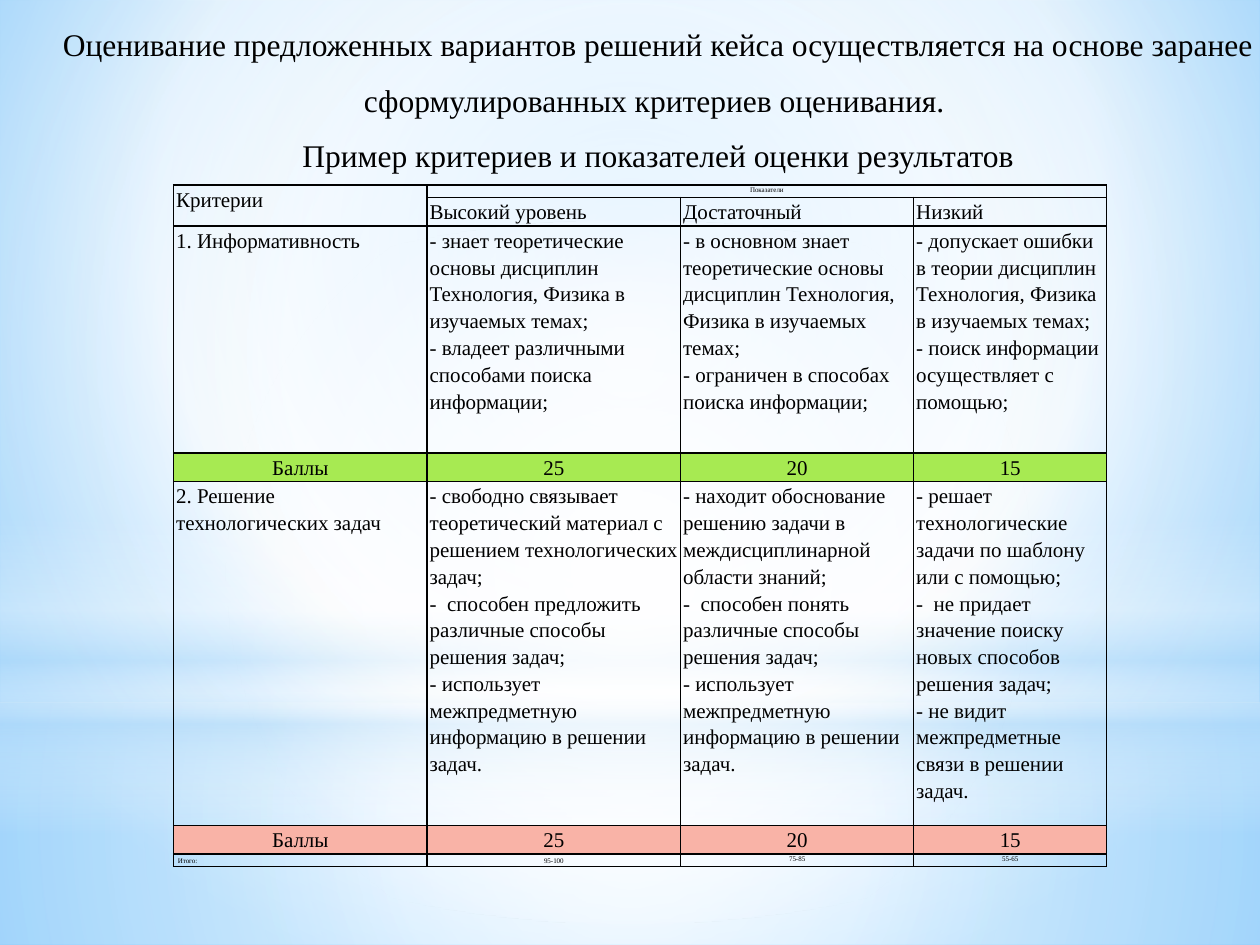
import pptx
import pptx.util
import pptx.dml.color
import pptx.enum.shapes
import pptx.enum.text
import pptx.oxml
import pptx.oxml.ns
from pptx.util import Cm, Pt

FONT = "Times New Roman"
INK = "000000"
ALIGN = pptx.enum.text.PP_ALIGN
ANCHOR = pptx.enum.text.MSO_ANCHOR
SHAPE = pptx.enum.shapes.MSO_SHAPE

HEADING = [
    "Оценивание предложенных вариантов решений кейса осуществляется на основе заранее",
    "сформулированных критериев оценивания. ",
    "Пример критериев и показателей оценки результатов",
]
HEADING_INDENT = 2.5

POINTS = ["Баллы", "25", "20", "15"]
ROWS = [
    ["Критерии", "Показатели", "", ""],
    ["", "Высокий уровень", "Достаточный", "Низкий"],
    [
        "1. Информативность",
        "- знает теоретические основы дисциплин Технология, Физика в изучаемых темах;\n"
        "- владеет различными способами поиска информации;",
        "- в основном знает теоретические основы дисциплин Технология, Физика в изучаемых темах;\n"
        "- ограничен в способах поиска информации;",
        "- допускает ошибки в теории дисциплин Технология, Физика в изучаемых темах;\n"
        "- поиск информации осуществляет с помощью;",
    ],
    POINTS,
    [
        "2. Решение технологических задач",
        "- свободно связывает теоретический материал с решением технологических задач;\n"
        "-  способен предложить различные способы решения задач;\n"
        "- использует межпредметную информацию в решении задач.",
        "- находит обоснование решению задачи в междисциплинарной области знаний;\n"
        "-  способен понять различные способы решения задач;\n"
        "- использует межпредметную информацию в решении задач.",
        "- решает технологические задачи по шаблону или с помощью;\n"
        "-  не придает значение поиску новых способов решения задач;\n"
        "- не видит межпредметные связи в решении задач.",
    ],
    POINTS,
    [" Итого:", "95-100", "75-85", "55-65"],
]
COLUMN_WIDTHS = [5.11, 5.11, 4.7, 3.89]
ROW_HEIGHTS = [0.25, 0.58, 4.57, 0.58, 6.93, 0.58, 0.25]
ROW_FILLS = {3: "A7EA52", 5: "F9B3A7"}
SMALL_CELLS = [(0, 1), (6, 0), (6, 1), (6, 2), (6, 3)]
MIDDLE_CELLS = [(6, 0), (6, 1)]

CENTRE = (50, 50, 50, 50)
BACKDROP = [(0, "9ED5FF", 100), (60, "FFFFFF", 100), (100, "5BB9FF", 100)]
GLOWS = [
    (SHAPE.RECTANGLE, (0, 14.17, 25.4, 4.88), CENTRE,
     [(0, "FFFFFF", 91), (37, "FFFFFF", 76), (100, "B4DCFA", 79)]),
    (SHAPE.RECTANGLE, (0, 0, 25.4, 14.17), CENTRE,
     [(0, "FFFFFF", 89), (48, "FFFFFF", 62), (100, "B4DCFA", 79)]),
    (SHAPE.RECTANGLE, (0, 10.46, 25.4, 6.35), None,
     [(0, "FFFFFF", 0), (29, "FFFFFF", 30), (45, "B4DCFA", 40),
      (55, "FFFFFF", 26), (65, "B4DCFA", 60), (100, "FFFFFF", 0)]),
    (SHAPE.OVAL, (0, 4.45, 25.4, 14.17), CENTRE,
     [(0, "FFFFFF", 100), (56, "FFFFFF", 0)]),
]


def colour(value):
    return pptx.dml.color.RGBColor.from_string(value)


def xml(text):
    return pptx.oxml.parse_xml(text.replace(">", f" {pptx.oxml.ns.nsdecls('a')}>", 1))


def set_gradient(fill, properties, stops, focus):
    fill.gradient()
    stop_xml = "".join(
        f'<a:gs pos="{place * 1000}"><a:srgbClr val="{value}">'
        f'<a:alpha val="{opacity * 1000}"/></a:srgbClr></a:gs>'
        for place, value, opacity in stops)
    if focus:
        edges = " ".join(f'{side}="{part * 1000}"' for side, part in zip("ltrb", focus))
        shade = f'<a:path path="circle"><a:fillToRect {edges}/></a:path>'
    else:
        shade = '<a:lin ang="5400000" scaled="0"/>'
    old = properties.find(pptx.oxml.ns.qn("a:gradFill"))
    properties.replace(old, xml(
        f'<a:gradFill rotWithShape="1"><a:gsLst>{stop_xml}</a:gsLst>{shade}</a:gradFill>'))


def write(frame, text, size=12, align=ALIGN.LEFT, spacing=1.15, after=0):
    for index, line in enumerate(text.split("\n")):
        para = frame.paragraphs[0] if index == 0 else frame.add_paragraph()
        para.alignment = align
        para.line_spacing = spacing
        para.space_before = Pt(0)
        para.space_after = Pt(after)
        span = para.add_run()
        span.text = line
        span.font.size = Pt(size)
        span.font.name = FONT
        span.font.bold = False
        span.font.color.rgb = colour(INK)


def set_margins(target, left, top, right, bottom):
    target.margin_left, target.margin_top = Cm(left), Cm(top)
    target.margin_right, target.margin_bottom = Cm(right), Cm(bottom)


def add_borders(cell):
    properties = cell._tc.get_or_add_tcPr()
    for side in "LRTB":
        properties.append(xml(
            f'<a:ln{side} w="12700"><a:solidFill><a:srgbClr val="{INK}"/>'
            f'</a:solidFill></a:ln{side}>'))


def add_glows(page):
    for kind, place, focus, stops in GLOWS:
        glow = page.shapes.add_shape(kind, *map(Cm, place))
        glow.shadow.inherit = False
        glow.line.fill.background()
        set_gradient(glow.fill, glow._element.spPr, stops, focus)


def add_heading(page):
    title = page.shapes.title
    page.shapes._spTree.append(title._element)
    title.left, title.top, title.width, title.height = map(Cm, (-4.34, 0.25, 32.72, 4.29))
    frame = title.text_frame
    frame.word_wrap = True
    frame.auto_size = pptx.enum.text.MSO_AUTO_SIZE.NONE
    frame.vertical_anchor = ANCHOR.TOP
    set_margins(frame, 0.25, 0.22, 0.25, 0.13)
    write(frame, "\n".join(HEADING), size=18, align=ALIGN.CENTER, spacing=1.05, after=9)
    frame.paragraphs[0]._p.get_or_add_pPr().set("marL", str(Cm(HEADING_INDENT)))


def add_criteria(page):
    table = page.shapes.add_table(
        len(ROWS), len(COLUMN_WIDTHS), Cm(3.5), Cm(3.73),
        Cm(sum(COLUMN_WIDTHS)), Cm(sum(ROW_HEIGHTS))).table
    table.first_row = table.horz_banding = False
    for column, width in zip(table.columns, COLUMN_WIDTHS):
        column.width = Cm(width)
    for row, height in zip(table.rows, ROW_HEIGHTS):
        row.height = Cm(height)
    table.cell(0, 0).merge(table.cell(1, 0))
    table.cell(0, 1).merge(table.cell(0, 3))
    for r, texts in enumerate(ROWS):
        for c, text in enumerate(texts):
            cell = table.cell(r, c)
            set_margins(cell, 0.05, 0, 0.05, 0)
            add_borders(cell)
            if r in ROW_FILLS:
                cell.fill.solid()
                cell.fill.fore_color.rgb = colour(ROW_FILLS[r])
            else:
                cell.fill.background()
            cell.vertical_anchor = ANCHOR.MIDDLE if (r, c) in MIDDLE_CELLS else ANCHOR.TOP
            small = (r, c) in SMALL_CELLS
            centred = r in ROW_FILLS or (small and c > 0)
            if text:
                write(cell.text_frame, text, size=4 if small else 12,
                      align=ALIGN.CENTER if centred else ALIGN.LEFT)


def main():
    deck = pptx.Presentation()
    deck.slide_width, deck.slide_height = Cm(25.4), Cm(19.05)
    page = deck.slides.add_slide(deck.slide_layouts[5])
    backdrop = page.background.fill
    set_gradient(backdrop, page._element.cSld.bg.bgPr, BACKDROP, (20, 10, 20, 60))
    add_glows(page)
    add_heading(page)
    add_criteria(page)
    deck.save("out.pptx")


if __name__ == "__main__":
    main()
